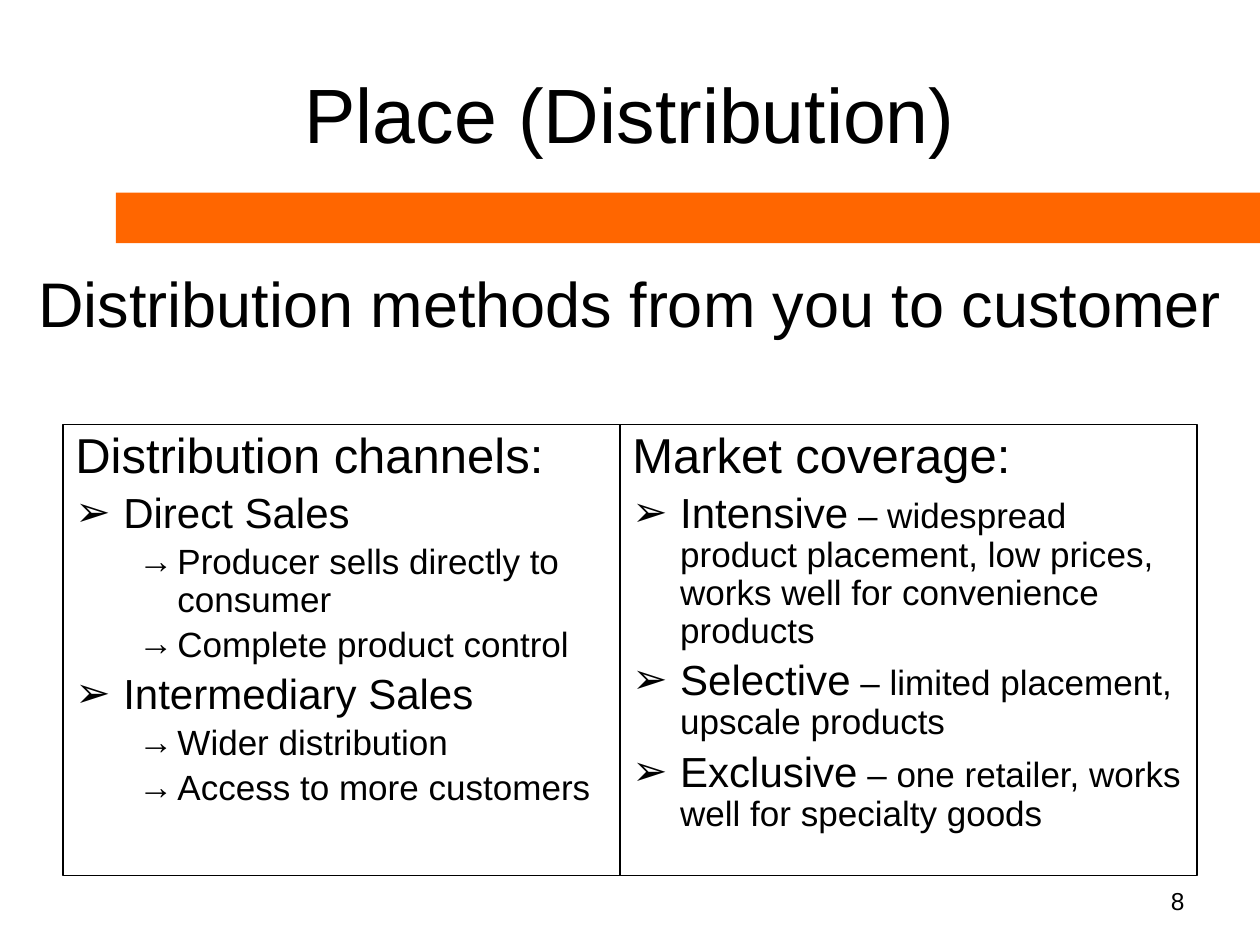
from dataclasses import dataclass

import lxml.etree
import pptx
import pptx.dml.color
import pptx.enum.shapes
import pptx.enum.text
import pptx.oxml.ns
import pptx.util

ALIGN = pptx.enum.text.PP_ALIGN
ANCHOR = pptx.enum.text.MSO_ANCHOR


@dataclass(frozen=True)
class Theme:
    """Colours, font and type sizes of the slide."""
    font: str = "Arial"
    ink: str = "000000"
    accent: str = "FF6600"
    title: int = 44
    subtitle: int = 36
    heading: int = 28
    topic: int = 24
    detail: int = 20
    number: int = 14
    border: float = 0.75
    line_spacing: float = 0.9
    space_share: float = 0.2


THEME = Theme()
WIDTH, HEIGHT = 10, 7.5
MARGIN = 0.5
SPLIT = 4.92
PANEL_TOP, PANEL_HEIGHT = 3.37, 3.58
LEVELS = {
    "heading": (0, 0.38, 0.38, None),
    "topic": (0, 0.38, 0.38, "➢"),
    "detail": (1, 0.81, 0.31, "→"),
}
CHANNELS = [
    ("heading", "Distribution channels:", ""),
    ("topic", "Direct Sales", ""),
    ("detail", "Producer sells directly to consumer", ""),
    ("detail", "Complete product control", ""),
    ("topic", "Intermediary Sales", ""),
    ("detail", "Wider distribution", ""),
    ("detail", "Access to more customers", ""),
]
COVERAGE = [
    ("heading", "Market coverage:", ""),
    ("topic", "Intensive", " – widespread product placement, low prices, "
                           "works well for convenience products"),
    ("topic", "Selective", " – limited placement, upscale products"),
    ("topic", "Exclusive", " – one retailer, works well for specialty goods"),
]


def color(value):
    """Return an RGB colour from its hex value."""
    return pptx.dml.color.RGBColor.from_string(value)


def inches(*lengths):
    """Convert lengths in inches to slide units."""
    return [pptx.util.Inches(length) for length in lengths]


def add_run(paragraph, text, size):
    """Add a run in the theme font."""
    run = paragraph.add_run()
    run.text = text
    run.font.name = THEME.font
    run.font.size = pptx.util.Pt(size)
    run.font.color.rgb = color(THEME.ink)


def add_rectangle(slide, box, fill=None, line=None):
    """Add a flat rectangle with an optional fill and outline."""
    kind = pptx.enum.shapes.MSO_SHAPE.RECTANGLE
    shape = slide.shapes.add_shape(kind, *inches(*box))
    shape.shadow.inherit = False
    if fill:
        shape.fill.solid()
        shape.fill.fore_color.rgb = color(fill)
    else:
        shape.fill.background()
    if line:
        shape.line.color.rgb = color(line)
        shape.line.width = pptx.util.Pt(THEME.border)
    else:
        shape.line.fill.background()
    return shape


def add_label(slide, box, text, size, align, anchor=ANCHOR.MIDDLE):
    """Add a text box holding a single line."""
    frame = slide.shapes.add_textbox(*inches(*box)).text_frame
    frame.word_wrap = True
    frame.vertical_anchor = anchor
    paragraph = frame.paragraphs[0]
    paragraph.alignment = align
    add_run(paragraph, text, size)


def set_outline(paragraph, level, left, hanging, bullet):
    """Give a paragraph its level, hanging indent and bullet."""
    paragraph.level = level
    properties = paragraph._p.get_or_add_pPr()
    left, hanging = inches(left, hanging)
    properties.set("marL", str(left))
    properties.set("indent", str(-hanging))
    if bullet:
        name = pptx.oxml.ns.qn
        lxml.etree.SubElement(properties, name("a:buFont"), typeface=THEME.font)
        lxml.etree.SubElement(properties, name("a:buChar"), char=bullet)


def add_panel(slide, left, right, entries):
    """Add an outlined panel with an outline of entries."""
    box = (left, PANEL_TOP, right - left, PANEL_HEIGHT)
    frame = add_rectangle(slide, box, line=THEME.ink).text_frame
    frame.word_wrap = True
    frame.vertical_anchor = ANCHOR.TOP
    for index, (kind, lead, rest) in enumerate(entries):
        paragraph = frame.add_paragraph() if index else frame.paragraphs[0]
        size = getattr(THEME, kind)
        set_outline(paragraph, *LEVELS[kind])
        paragraph.alignment = ALIGN.LEFT
        paragraph.line_spacing = THEME.line_spacing
        if index:
            paragraph.space_before = pptx.util.Pt(size * THEME.space_share)
        add_run(paragraph, lead, size)
        if rest:
            add_run(paragraph, rest, THEME.detail)


def main():
    """Build the slide and save it."""
    presentation = pptx.Presentation()
    presentation.slide_width, presentation.slide_height = inches(WIDTH, HEIGHT)
    slide = presentation.slides.add_slide(presentation.slide_layouts[6])
    inner = WIDTH - 2 * MARGIN

    add_rectangle(slide, (0.92, 1.53, WIDTH - 0.92, 0.4), fill=THEME.accent)
    add_label(slide, (7.17, 6.95, 2.33, 0.4), "8", THEME.number, ALIGN.RIGHT)
    add_label(slide, (MARGIN, 0.3, inner, 1.19), "Place (Distribution)",
              THEME.title, ALIGN.CENTER)
    add_panel(slide, MARGIN, SPLIT, CHANNELS)
    add_panel(slide, SPLIT, WIDTH - MARGIN, COVERAGE)
    add_label(slide, (0, 2.05, WIDTH, 0.92),
              "Distribution methods from you to customer",
              THEME.subtitle, ALIGN.CENTER, ANCHOR.TOP)
    presentation.save("out.pptx")


if __name__ == "__main__":
    main()
